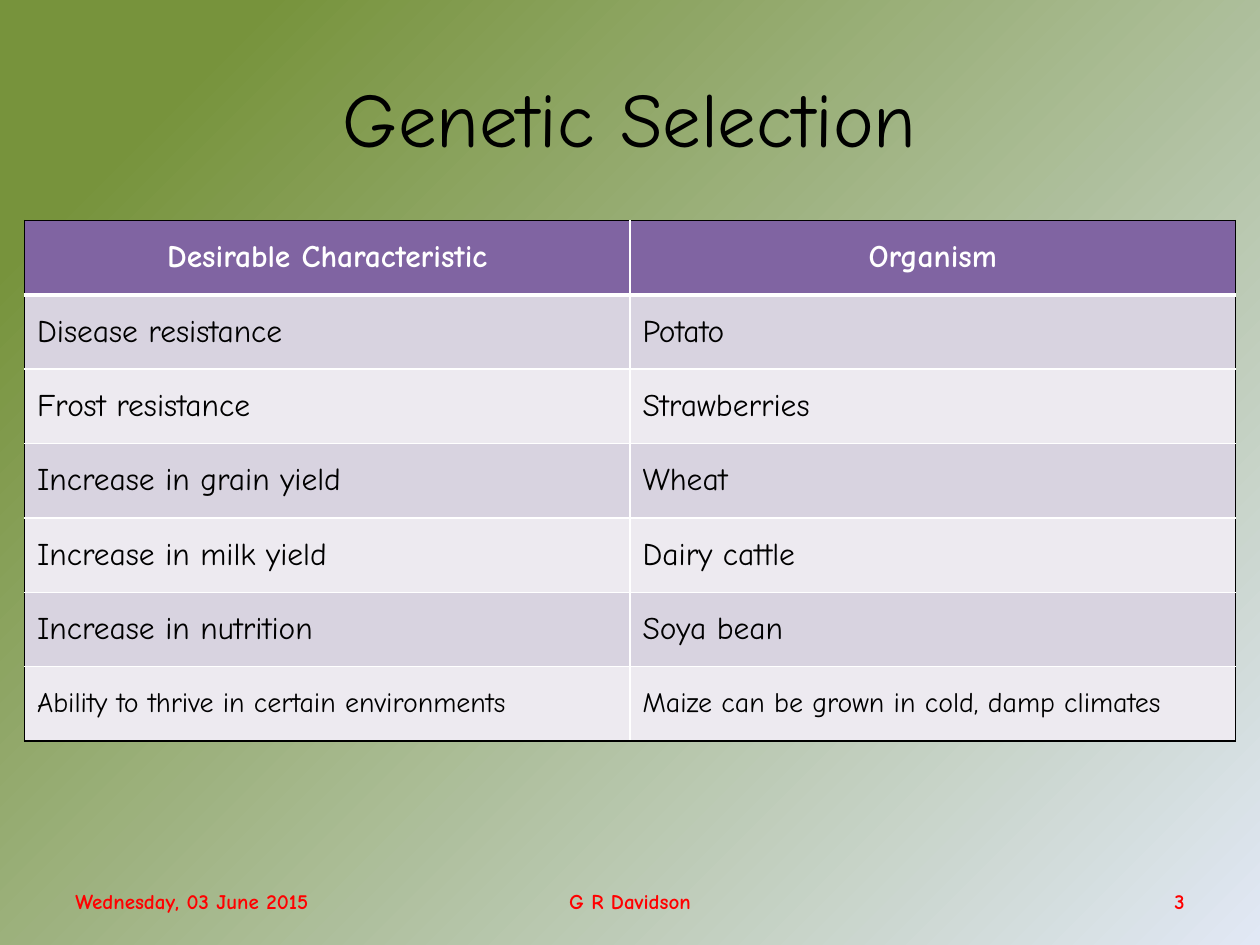
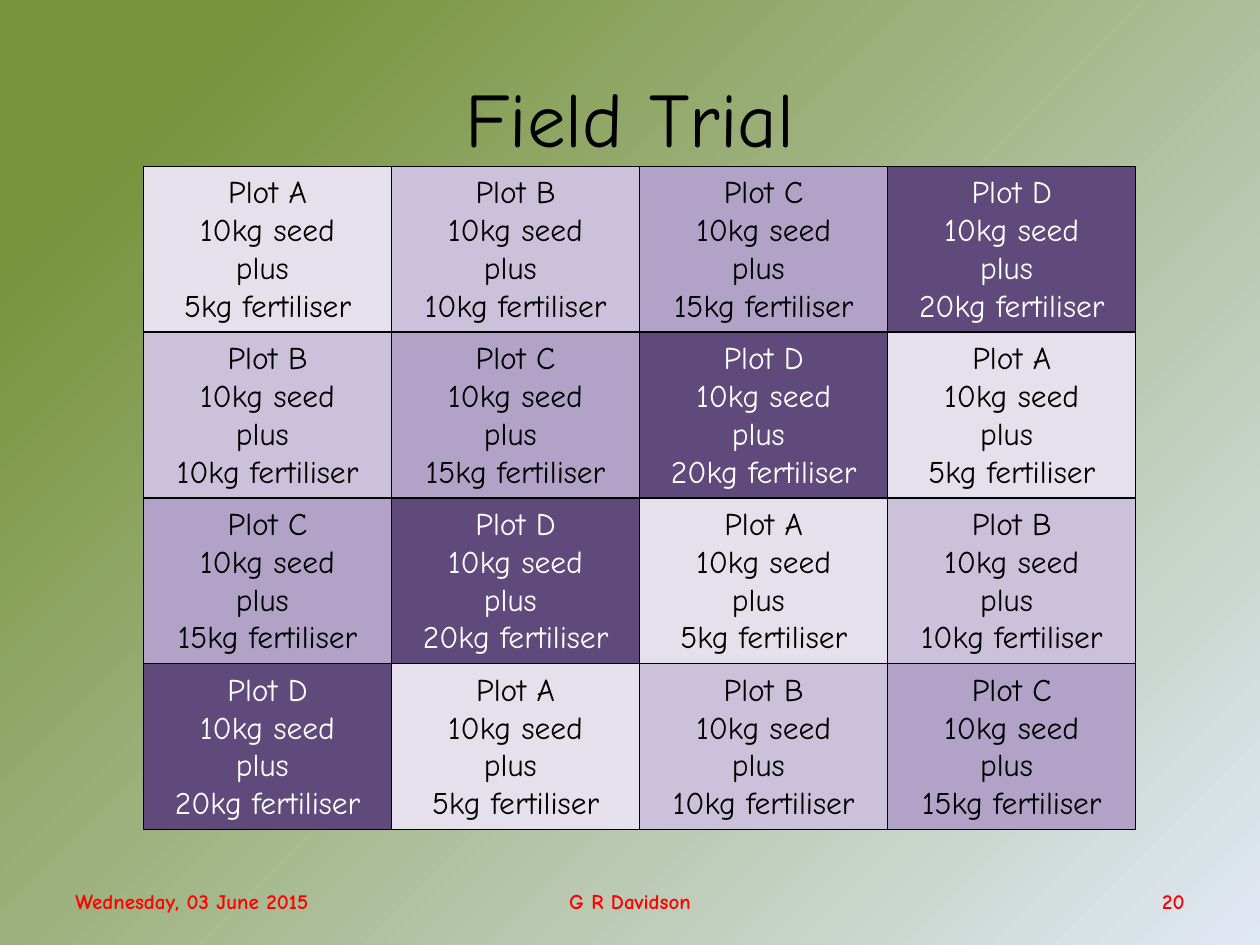
from collections import namedtuple
from dataclasses import dataclass

from lxml import etree
from pptx import Presentation
from pptx.dml.color import RGBColor
from pptx.enum.shapes import MSO_SHAPE
from pptx.enum.text import MSO_ANCHOR, PP_ALIGN
from pptx.oxml.ns import qn
from pptx.util import Pt

LEFT, CENTER, RIGHT = PP_ALIGN.LEFT, PP_ALIGN.CENTER, PP_ALIGN.RIGHT
TOP, MIDDLE = MSO_ANCHOR.TOP, MSO_ANCHOR.MIDDLE
RECTANGLE = MSO_SHAPE.RECTANGLE
TITLE_ONLY = 5

Box = namedtuple("Box", "left top width height")


@dataclass(frozen=True)
class Theme:
    font: str = "Comic Neue"
    ink: str = "000000"
    paper: str = "FFFFFF"
    field_green: str = "77933C"
    sky: str = "E1E8F5"
    header: str = "8064A2"
    bands: tuple = ("D8D3E0", "EDEAF0")
    footer: str = "FF0000"
    title_size: int = 44
    body_size: int = 18
    small_size: int = 16
    footer_size: int = 12


THEME = Theme()
SLIDE = Box(0, 0, 720, 540)
TITLE = Box(36, 21.6, 648, 90)
FOOTER = Box(36, 500.4, 648, 28.8)
TRAITS_TABLE = Box(14, 126, 692, 297.5)
TRIAL_GRID = Box(82, 95, 567, 379)

TRAITS = [
    ("Desirable Characteristic", "Organism"),
    ("Disease resistance", "Potato"),
    ("Frost resistance", "Strawberries"),
    ("Increase in grain yield", "Wheat"),
    ("Increase in milk yield", "Dairy cattle"),
    ("Increase in nutrition", "Soya bean"),
    ("Ability to thrive in certain environments",
     "Maize can be grown in cold, damp climates"),
]
PLOTS = [
    ("A", 5, "E6E0EC", THEME.ink),
    ("B", 10, "CCC1DA", THEME.ink),
    ("C", 15, "B3A2C7", THEME.ink),
    ("D", 20, "604A7B", THEME.paper),
]


def color(value):
    return RGBColor.from_string(value)


def points(box):
    return [Pt(length) for length in box]


def write(frame, text, size, ink, align=LEFT, bold=False, anchor=MIDDLE):
    frame.word_wrap = True
    frame.vertical_anchor = anchor
    frame.text = text
    for para in frame.paragraphs:
        para.alignment = align
        for span in para.runs:
            span.font.name = THEME.font
            span.font.size = Pt(size)
            span.font.bold = bold
            span.font.color.rgb = color(ink)


def paint_background(master):
    fill = master.background.fill
    fill.gradient()
    fill.gradient_angle = 315
    stops = ((0.12, THEME.field_green), (1, THEME.sky))
    for stop, (position, shade) in zip(fill.gradient_stops, stops):
        stop.position = position
        stop.color.rgb = color(shade)


def add_footer(page, box, number):
    parts = [
        (0, 239, "Wednesday, 03 June 2015", LEFT),
        (210, 228, "G R Davidson", CENTER),
        (480, 168, str(number), RIGHT),
    ]
    for offset, width, text, align in parts:
        place = Box(box.left + offset, box.top, width, box.height)
        note = page.shapes.add_textbox(*points(place))
        write(note.text_frame, text, THEME.footer_size, THEME.footer, align, True)


def add_page(deck, title, number):
    page = deck.slides.add_slide(deck.slide_layouts[TITLE_ONLY])
    heading = page.shapes.title
    heading.left, heading.top, heading.width, heading.height = points(TITLE)
    write(heading.text_frame, title, THEME.title_size, THEME.ink, CENTER)
    add_footer(page, FOOTER, number)
    return page


def set_borders(cell, borders):
    properties = cell._tc.get_or_add_tcPr()
    for index, (side, (shade, width)) in enumerate(borders.items()):
        line = etree.Element(qn("a:ln" + side), w=str(Pt(width)))
        fill = etree.SubElement(line, qn("a:solidFill"))
        etree.SubElement(fill, qn("a:srgbClr"), val=shade)
        properties.insert(index, line)


def add_traits_table(page, box):
    rows, columns = len(TRAITS), len(TRAITS[0])
    table = page.shapes.add_table(rows, columns, *points(box)).table
    for column in table.columns:
        column.width = Pt(box.width / columns)
    for row in table.rows:
        row.height = Pt(box.height / rows)
    outer, inner, heavy = (THEME.ink, 1), (THEME.paper, 1), (THEME.paper, 3)
    for r, texts in enumerate(TRAITS):
        is_header, is_last = r == 0, r == rows - 1
        for c, text in enumerate(texts):
            cell = table.cell(r, c)
            cell.fill.solid()
            shade = THEME.header if is_header else THEME.bands[(r - 1) % 2]
            cell.fill.fore_color.rgb = color(shade)
            write(cell.text_frame, text,
                  THEME.small_size if is_last else THEME.body_size,
                  THEME.paper if is_header else THEME.ink,
                  CENTER if is_header else LEFT, is_header)
            cell.vertical_anchor = MIDDLE
            set_borders(cell, {
                "L": outer if c == 0 else inner,
                "R": outer if c == columns - 1 else inner,
                "T": outer if is_header else heavy if r == 1 else inner,
                "B": heavy if is_header else outer if is_last else inner,
            })


def add_plot(page, box, plot):
    letter, fertiliser, shade, ink = plot
    tile = page.shapes.add_shape(RECTANGLE, *points(box))
    tile.shadow.inherit = False
    tile.fill.solid()
    tile.fill.fore_color.rgb = color(shade)
    tile.line.color.rgb = color(THEME.ink)
    tile.line.width = Pt(0.75)
    text = f"Plot {letter}\n10kg seed\nplus \n{fertiliser}kg fertiliser"
    write(tile.text_frame, text, THEME.body_size, ink, CENTER, anchor=TOP)


def add_trial_grid(page, box):
    count = len(PLOTS)
    width, height = box.width / count, box.height / count
    for row in range(count):
        for column in range(count):
            place = Box(box.left + column * width, box.top + row * height,
                        width, height)
            add_plot(page, place, PLOTS[(row + column) % count])


def main():
    deck = Presentation()
    deck.slide_width, deck.slide_height = Pt(SLIDE.width), Pt(SLIDE.height)
    paint_background(deck.slide_master)
    add_traits_table(add_page(deck, "Genetic Selection", 3), TRAITS_TABLE)
    add_trial_grid(add_page(deck, "Field Trial", 20), TRIAL_GRID)
    deck.save("out.pptx")


if __name__ == "__main__":
    main()
